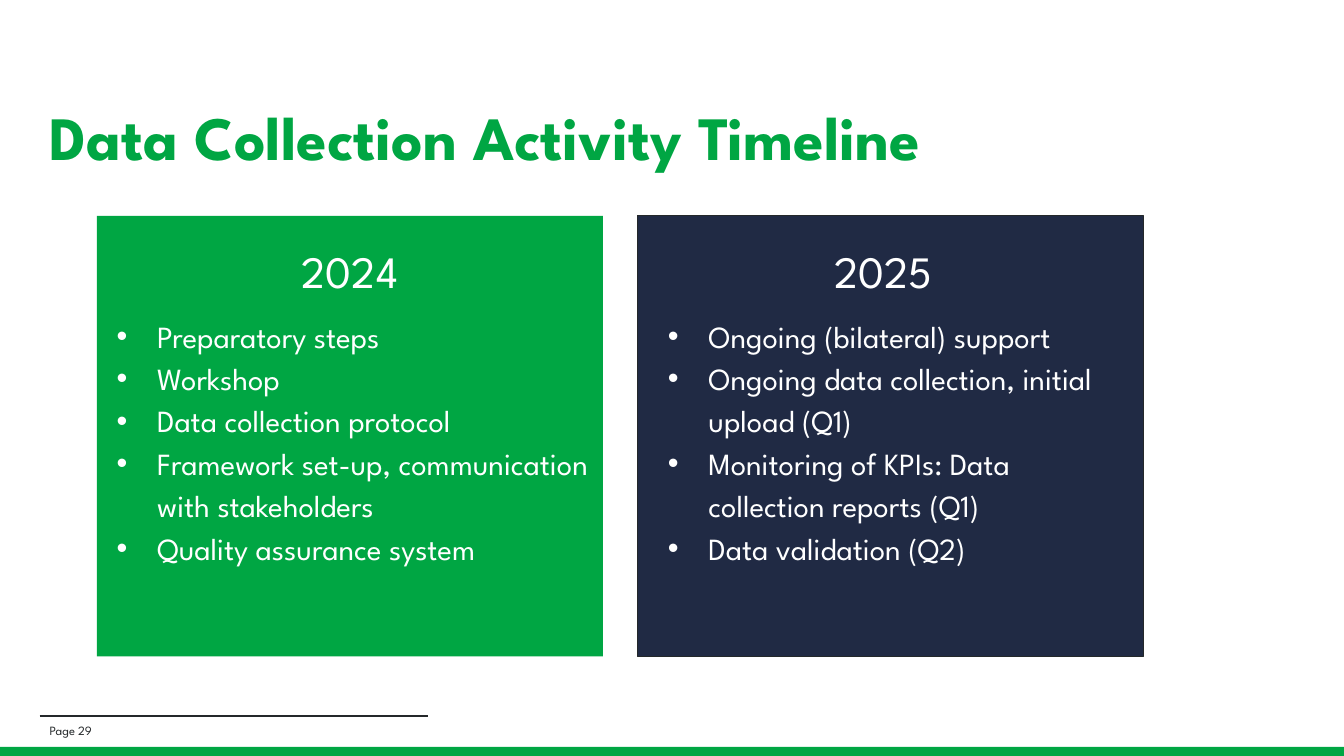
from lxml.etree import SubElement
from pptx import Presentation
from pptx.dml.color import RGBColor
from pptx.enum.shapes import MSO_CONNECTOR, MSO_SHAPE
from pptx.enum.text import MSO_ANCHOR, PP_ALIGN
from pptx.oxml.ns import qn
from pptx.util import Cm, Pt

GREEN = RGBColor(0x00, 0xA6, 0x43)
NAVY = RGBColor(0x20, 0x2A, 0x44)
DARK = RGBColor(0x24, 0x28, 0x2A)
WHITE = RGBColor(0xFF, 0xFF, 0xFF)
FONT = "League Spartan"

TITLE = "Data Collection Activity Timeline"
FOOTER = "Page 29"
YEARS = [
    {
        "year": "2024", "fill": GREEN, "line": None,
        "panel_left": 2.44, "text_left": 2.44, "text_width": 12.75,
        "steps": [
            "Preparatory steps",
            "Workshop",
            "Data collection protocol",
            "Framework set-up, communication with stakeholders",
            "Quality assurance system",
        ],
    },
    {
        "year": "2025", "fill": NAVY, "line": DARK,
        "panel_left": 16.05, "text_left": 16.33, "text_width": 11.86,
        "steps": [
            "Ongoing (bilateral) support",
            "Ongoing data collection, initial upload (Q1)",
            "Monitoring of KPIs: Data collection reports (Q1)",
            "Data validation (Q2)",
        ],
    },
]

SLIDE_WIDTH, SLIDE_HEIGHT = 33.86, 19.05
MARGIN = 1.0
PANEL_TOP, PANEL_WIDTH, PANEL_HEIGHT = 5.44, 12.75, 11.1
TEXT_TOP, TEXT_HEIGHT = 5.82, 9.6
BAR_TOP = 18.82
RULE_TOP, RULE_RIGHT = 18.05, 10.78


def add_rectangle(page, left, top, width, height, fill, line=None):
    shape = page.shapes.add_shape(
        MSO_SHAPE.RECTANGLE, Cm(left), Cm(top), Cm(width), Cm(height))
    shape.shadow.inherit = False
    shape.fill.solid()
    shape.fill.fore_color.rgb = fill
    if line is None:
        shape.line.fill.background()
    else:
        shape.line.color.rgb = line
        shape.line.width = Pt(0.75)


def add_frame(page, left, top, width, height, anchor=MSO_ANCHOR.TOP):
    box = page.shapes.add_textbox(Cm(left), Cm(top), Cm(width), Cm(height))
    frame = box.text_frame
    frame.word_wrap = True
    frame.vertical_anchor = anchor
    return frame


def add_span(para, text, size, color, bold=False):
    span = para.add_run()
    span.text = text
    span.font.name = FONT
    span.font.size = Pt(size)
    span.font.bold = bold
    span.font.color.rgb = color


def add_bullet(para):
    properties = para._p.get_or_add_pPr()
    properties.set("marL", str(Cm(1.27)))
    properties.set("indent", str(Cm(-1.02)))
    color = SubElement(properties, qn("a:buClr"))
    SubElement(color, qn("a:srgbClr"), val=str(WHITE))
    SubElement(properties, qn("a:buFont"), typeface="Arial")
    SubElement(properties, qn("a:buChar"), char="•")


def add_year(page, entry):
    add_rectangle(page, entry["panel_left"], PANEL_TOP, PANEL_WIDTH,
                  PANEL_HEIGHT, entry["fill"], entry["line"])
    frame = add_frame(page, entry["text_left"], TEXT_TOP,
                      entry["text_width"], TEXT_HEIGHT)
    heading = frame.paragraphs[0]
    heading.alignment = PP_ALIGN.CENTER
    heading.line_spacing = 1.15
    add_span(heading, entry["year"], 32, WHITE)
    for index, step in enumerate(entry["steps"]):
        para = frame.add_paragraph()
        add_bullet(para)
        para.line_spacing = 1.15
        para.space_before = Pt(0 if index else 10)
        add_span(para, step, 22, WHITE)


def add_footer(page):
    add_rectangle(page, 0, BAR_TOP, SLIDE_WIDTH, SLIDE_HEIGHT - BAR_TOP, GREEN)
    rule = page.shapes.add_connector(
        MSO_CONNECTOR.STRAIGHT, Cm(MARGIN), Cm(RULE_TOP),
        Cm(RULE_RIGHT), Cm(RULE_TOP))
    rule.line.color.rgb = DARK
    rule.line.width = Pt(1.5)
    SubElement(rule._element.spPr, qn("a:effectLst"))
    frame = add_frame(page, MARGIN, 18.16, 10.31, 0.48, MSO_ANCHOR.MIDDLE)
    add_span(frame.paragraphs[0], FOOTER, 9, DARK)


def main():
    deck = Presentation()
    deck.slide_width, deck.slide_height = Cm(SLIDE_WIDTH), Cm(SLIDE_HEIGHT)
    page = deck.slides.add_slide(deck.slide_layouts[6])
    title = add_frame(page, MARGIN, 1.7, 31.85, 3.68, MSO_ANCHOR.MIDDLE)
    title.paragraphs[0].line_spacing = 0.9
    add_span(title.paragraphs[0], TITLE, 44, GREEN, bold=True)
    for entry in YEARS:
        add_year(page, entry)
    add_footer(page)
    deck.save("out.pptx")


if __name__ == "__main__":
    main()
